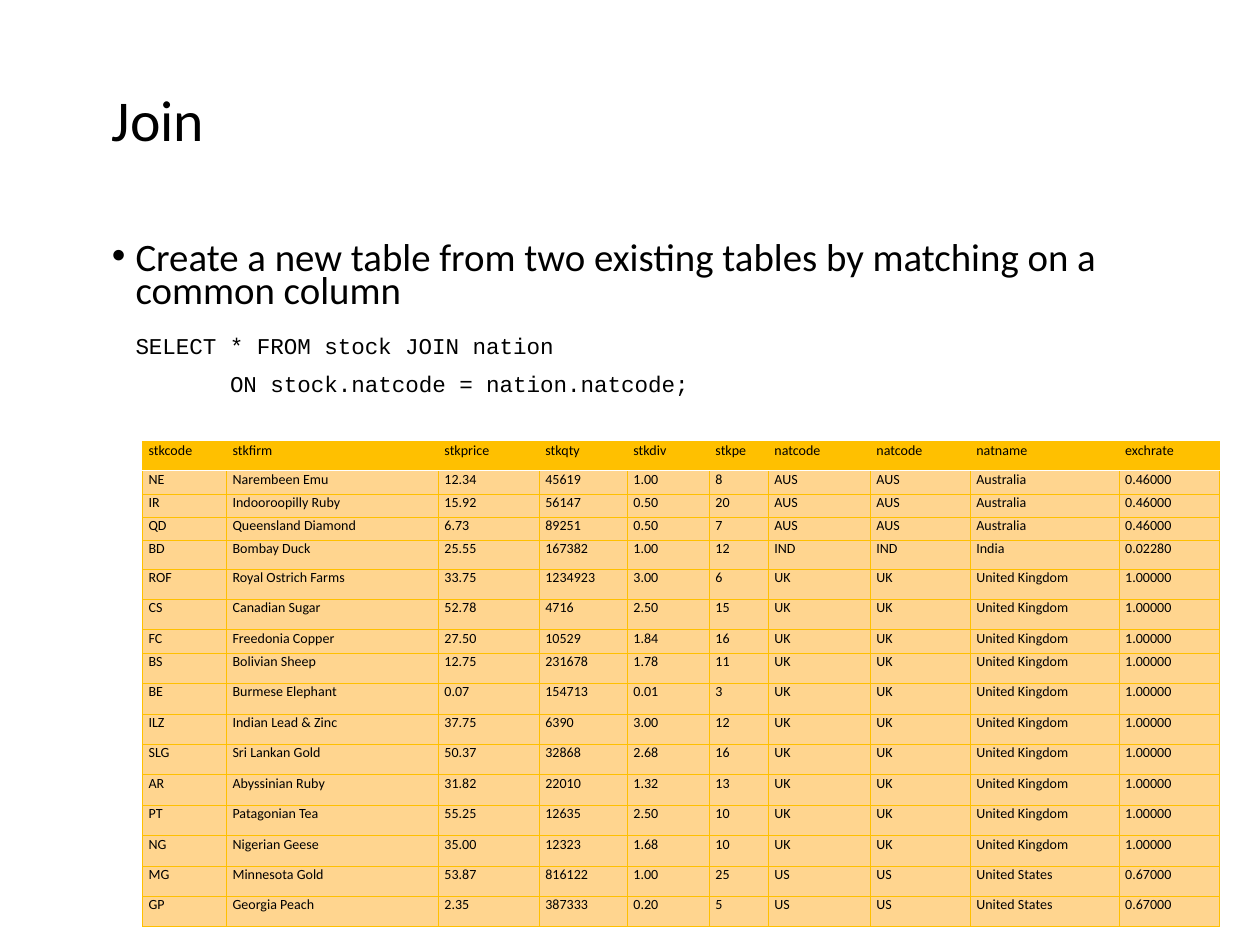
from lxml.etree import SubElement
from pptx import Presentation
from pptx.dml.color import RGBColor
from pptx.enum.text import MSO_ANCHOR
from pptx.oxml.ns import qn
from pptx.util import Pt

COLORS = {"text": "000000", "gold": "FFC000", "row": "FFD58F", "rule": "FFFFFF"}

HEADINGS = ["stkcode", "stkfirm", "stkprice", "stkqty", "stkdiv", "stkpe",
            "natcode", "natcode", "natname", "exchrate"]
NATIONS = {
    "AUS": ("Australia", "0.46000"),
    "IND": ("India", "0.02280"),
    "UK": ("United Kingdom", "1.00000"),
    "US": ("United States", "0.67000"),
}
STOCKS = [
    ("NE", "Narembeen Emu", "12.34", "45619", "1.00", "8", "AUS"),
    ("IR", "Indooroopilly Ruby", "15.92", "56147", "0.50", "20", "AUS"),
    ("QD", "Queensland Diamond", "6.73", "89251", "0.50", "7", "AUS"),
    ("BD", "Bombay Duck", "25.55", "167382", "1.00", "12", "IND"),
    ("ROF", "Royal Ostrich Farms", "33.75", "1234923", "3.00", "6", "UK"),
    ("CS", "Canadian Sugar", "52.78", "4716", "2.50", "15", "UK"),
    ("FC", "Freedonia Copper", "27.50", "10529", "1.84", "16", "UK"),
    ("BS", "Bolivian Sheep", "12.75", "231678", "1.78", "11", "UK"),
    ("BE", "Burmese Elephant", "0.07", "154713", "0.01", "3", "UK"),
    ("ILZ", "Indian Lead & Zinc", "37.75", "6390", "3.00", "12", "UK"),
    ("SLG", "Sri Lankan Gold", "50.37", "32868", "2.68", "16", "UK"),
    ("AR", "Abyssinian Ruby", "31.82", "22010", "1.32", "13", "UK"),
    ("PT", "Patagonian Tea", "55.25", "12635", "2.50", "10", "UK"),
    ("NG", "Nigerian Geese", "35.00", "12323", "1.68", "10", "UK"),
    ("MG", "Minnesota Gold", "53.87", "816122", "1.00", "25", "US"),
    ("GP", "Georgia Peach", "2.35", "387333", "0.20", "5", "US"),
]
COLUMN_WIDTHS = [48, 121.1, 57.7, 50.3, 46.9, 33.7, 58.3, 57.1, 85.1, 57.7]
ROW_HEIGHTS = [16.6, 13.3, 13.3, 13.3, 16.3, 17.4, 17.4, 13.3] + [17.4] * 9


def add_text_frame(slide, box, anchor):
    frame = slide.shapes.add_textbox(*map(Pt, box)).text_frame
    frame.word_wrap = True
    frame.vertical_anchor = anchor
    return frame


def add_run(paragraph, text, size, font="Calibri"):
    run = paragraph.add_run()
    run.text = text
    run.font.size = Pt(size)
    run.font.name = font
    run.font.color.rgb = RGBColor.from_string(COLORS["text"])


def set_indent(paragraph, left, first=0, bullet=None):
    properties = paragraph._p.get_or_add_pPr()
    properties.set("marL", str(Pt(left)))
    properties.set("indent", str(Pt(first)))
    if bullet:
        SubElement(properties, qn("a:buFont"), typeface="Arial")
        SubElement(properties, qn("a:buChar"), char=bullet)


def set_border(cell, side, color, width):
    line = SubElement(cell._tc.get_or_add_tcPr(), qn(f"a:ln{side}"), w=str(Pt(width)))
    fill = SubElement(line, qn("a:solidFill"))
    SubElement(fill, qn("a:srgbClr"), val=color)


def add_title(slide, box):
    paragraph = add_text_frame(slide, box, MSO_ANCHOR.MIDDLE).paragraphs[0]
    paragraph.line_spacing = 0.9
    add_run(paragraph, "Join", 33)


def add_explanation(slide, box):
    frame = add_text_frame(slide, box, MSO_ANCHOR.TOP)

    # Bullet
    bullet = frame.paragraphs[0]
    bullet.line_spacing = 0.7
    bullet.space_before = Pt(7.5)
    set_indent(bullet, 13.5, -13.5, "•")
    add_run(bullet, "Create a new table from two existing tables "
                    "by matching on a common column", 22.2)

    # Query, its second line indented further
    for query_line, left, gap in [("SELECT * FROM stock JOIN nation", 13.5, 16.3),
                                  ("ON stock.natcode = nation.natcode;", 67.5, 10.6)]:
        query = frame.add_paragraph()
        query.line_spacing = 0.7
        query.space_before = Pt(gap)
        set_indent(query, left)
        add_run(query, query_line, 12.9, "Courier New")


def fill_cell(cell, text, row):
    cell.margin_left = cell.margin_right = Pt(3.6)
    cell.margin_top = cell.margin_bottom = 0
    paragraph = cell.text_frame.paragraphs[0]
    paragraph.space_before = Pt(1.6)
    add_run(paragraph, text, 8)

    # A white rule parts the heading from the stocks
    for side in "LRTB":
        if (row, side) in [(0, "B"), (1, "T")]:
            set_border(cell, side, COLORS["rule"], 1)
        else:
            set_border(cell, side, COLORS["gold"], 0.5)
    cell.fill.solid()
    cell.fill.fore_color.rgb = RGBColor.from_string(COLORS["row" if row else "gold"])


def add_joined_table(slide, left, top):
    records = [HEADINGS] + [(*stock, stock[-1], *NATIONS[stock[-1]]) for stock in STOCKS]
    joined = slide.shapes.add_table(
        len(records), len(HEADINGS), Pt(left), Pt(top),
        Pt(sum(COLUMN_WIDTHS)), Pt(sum(ROW_HEIGHTS))).table
    joined.first_row = joined.horz_banding = False
    for column, width in zip(joined.columns, COLUMN_WIDTHS):
        column.width = Pt(width)
    for row, (record, height) in enumerate(zip(records, ROW_HEIGHTS)):
        joined.rows[row].height = Pt(height)
        for column, value in enumerate(record):
            fill_cell(joined.cell(row, column), value, row)


def main():
    deck = Presentation()
    deck.slide_width, deck.slide_height = Pt(720), Pt(540)
    slide = deck.slides.add_slide(deck.slide_layouts[6])
    add_title(slide, (56.9, 25.2, 612, 90))
    add_explanation(slide, (56.9, 136.8, 645, 94.3))
    add_joined_table(slide, 81.3, 252.4)
    deck.save("out.pptx")


if __name__ == "__main__":
    main()
